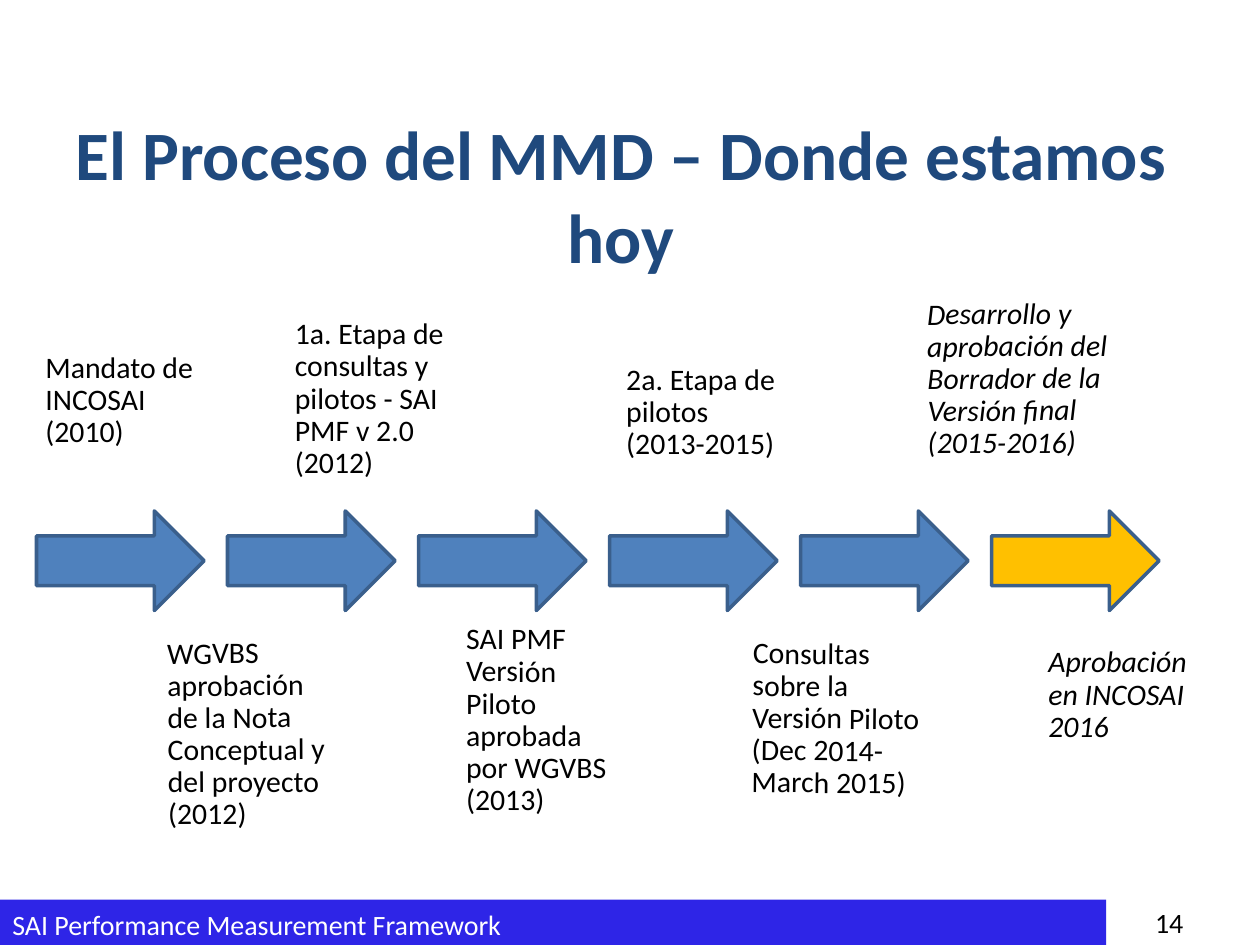
from collections import namedtuple

from pptx import Presentation
from pptx.dml.color import RGBColor
from pptx.enum.shapes import MSO_SHAPE
from pptx.enum.text import MSO_ANCHOR, PP_ALIGN
from pptx.util import Inches, Pt

BLACK = RGBColor(0, 0, 0)
WHITE = RGBColor(255, 255, 255)
NAVY = RGBColor(0x1F, 0x49, 0x7D)
FOOTER_BLUE = RGBColor(0x2E, 0x25, 0xE7)
ARROW_BLUE = RGBColor(0x4F, 0x81, 0xBD)
ARROW_EDGE = RGBColor(0x3A, 0x5F, 0x8C)
AMBER = RGBColor(0xFF, 0xC0, 0x00)

SLIDE_WIDTH, SLIDE_HEIGHT = Inches(10), Inches(7.5)
COLUMN = SLIDE_WIDTH / 100
ROW = SLIDE_HEIGHT / 75

Box = namedtuple("Box", "left top width height")
Label = namedtuple("Label", "text box rotation italic")

LABELS = [
    Label("Mandato de INCOSAI (2010)", Box(3.3, 1.7, 13.2, 6.4), 0, False),
    Label("WGVBS aprobación de la Nota Conceptual y del proyecto (2012)",
          Box(13, 28.2, 13.2, 6.4), -0.3, False),
    Label("1a. Etapa de consultas y pilotos - SAI PMF v 2.0\n(2012)",
          Box(23.1, 1.6, 15.9, 6.4), 0, False),
    Label("SAI PMF Versión Piloto aprobada por WGVBS (2013)",
          Box(36.7, 27.1, 13.2, 6.4), 0.1, False),
    Label("2a. Etapa de pilotos (2013-2015)", Box(49.4, 2.7, 13.2, 6.4), 0, False),
    Label("Consultas sobre la Versión Piloto (Dec 2014-March 2015)",
          Box(59.4, 27, 14.6, 6.4), 0.6, False),
    Label("Desarrollo y aprobación del Borrador de la Versión final\n(2015-2016)",
          Box(73.3, 0, 15.5, 6.4), -0.3, True),
    Label("Aprobación en INCOSAI 2016", Box(82.9, 24.6, 13.2, 7.4), 0, True),
]


def place(box):
    return (round(box.left * COLUMN), round(box.top * ROW),
            round(box.width * COLUMN), round(box.height * ROW))


def inside(outer, inner):
    return inner._replace(left=outer.left + inner.left, top=outer.top + inner.top)


def write(shape, text, size, color, alignment=PP_ALIGN.LEFT,
          anchor=MSO_ANCHOR.MIDDLE, bold=False, italic=False):
    frame = shape.text_frame
    frame.word_wrap = True
    frame.vertical_anchor = anchor
    paragraph = frame.paragraphs[0]
    paragraph.alignment = alignment
    for index, line in enumerate(text.split("\n")):
        if index:
            paragraph.add_line_break()
        run = paragraph.add_run()
        run.text = line
        run.font.name = "Calibri"
        run.font.size = Pt(size)
        run.font.bold = bold
        run.font.italic = italic
        run.font.color.rgb = color
    return paragraph


def add_filled_shape(slide, kind, box, fill):
    shape = slide.shapes.add_shape(kind, *place(box))
    shape.shadow.inherit = False
    shape.fill.solid()
    shape.fill.fore_color.rgb = fill
    shape.line.fill.background()
    return shape


def add_title(slide, box):
    title = slide.shapes.add_textbox(*place(box))
    write(title, "El Proceso del MMD – Donde estamos hoy", 39.6, NAVY,
          PP_ALIGN.CENTER, bold=True)


def add_label(slide, box, label):
    shape = slide.shapes.add_textbox(*place(box))
    shape.rotation = label.rotation
    frame = shape.text_frame
    frame.margin_left = Inches(0.03)
    frame.margin_top = frame.margin_right = frame.margin_bottom = 0
    paragraph = write(shape, label.text, 17, BLACK, italic=label.italic)
    paragraph.line_spacing = 0.9


def add_arrows(slide, box, count=6, arrow_width=13.3):
    pitch = (box.width - arrow_width) / (count - 1)
    for index in range(count):
        fill = AMBER if index == count - 1 else ARROW_BLUE
        arrow_box = Box(box.left + index * pitch, box.top, arrow_width, box.height)
        arrow = add_filled_shape(slide, MSO_SHAPE.RIGHT_ARROW, arrow_box, fill)
        arrow.line.color.rgb = ARROW_EDGE
        arrow.line.width = Pt(2)


def add_timeline(slide, box):
    for label in LABELS:
        add_label(slide, inside(box, label.box), label)
    add_arrows(slide, inside(box, Box(2.9, 13.65, 89.1, 7.9)))


def add_footer(slide, box):
    band_width = 87.8
    band = add_filled_shape(slide, MSO_SHAPE.RECTANGLE,
                            box._replace(width=band_width), FOOTER_BLUE)
    write(band, "SAI Performance Measurement Framework", 16, WHITE)
    number = slide.shapes.add_textbox(
        *place(inside(box, Box(band_width, 0, 7.1, 3.6))))
    write(number, "14", 16, BLACK, PP_ALIGN.RIGHT, MSO_ANCHOR.TOP)


def main():
    presentation = Presentation()
    presentation.slide_width = SLIDE_WIDTH
    presentation.slide_height = SLIDE_HEIGHT
    slide = presentation.slides.add_slide(presentation.slide_layouts[6])
    add_footer(slide, Box(0, 71.4, 100, 3.9))
    add_title(slide, Box(4.3, 12.3, 90, 6.3))
    add_timeline(slide, Box(0, 26.9, 100, 40))
    presentation.save("out.pptx")


if __name__ == "__main__":
    main()
